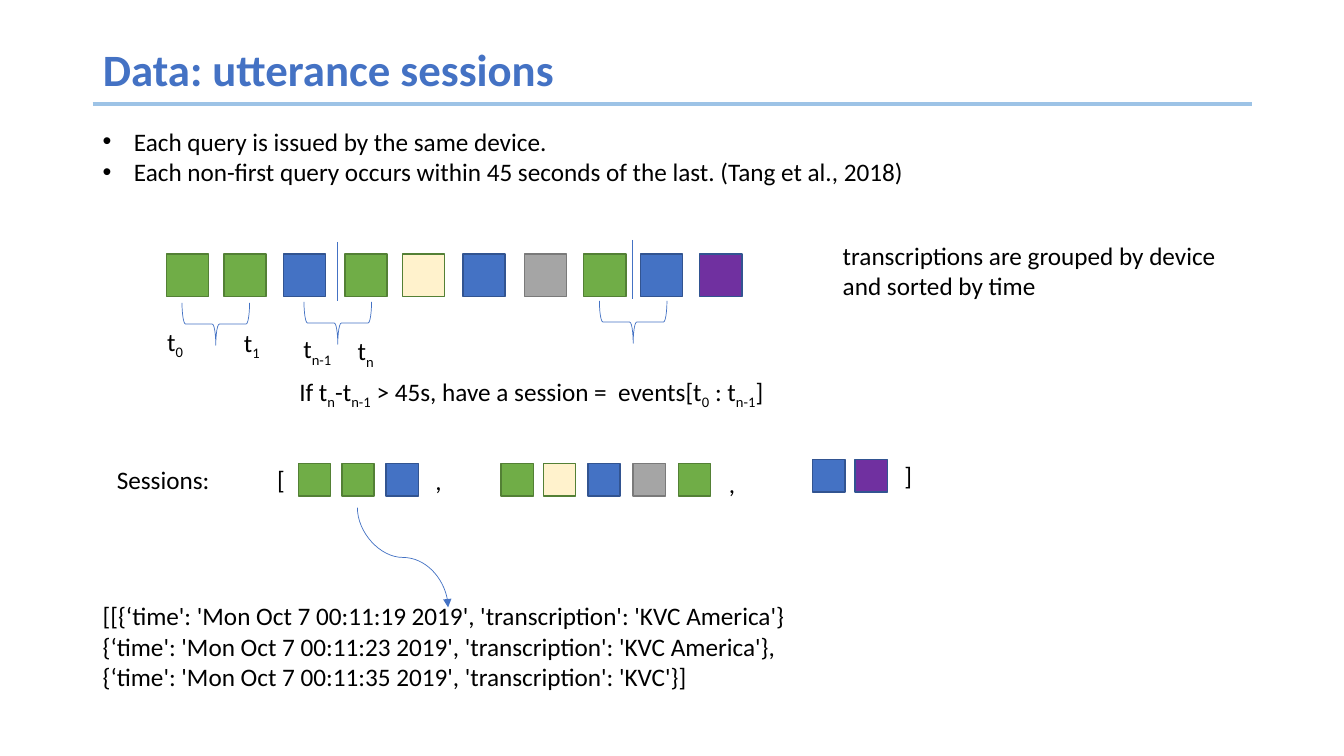
import pptx
import pptx.util
import pptx.dml.color
import pptx.enum.shapes
import pptx.enum.text
import pptx.oxml
import pptx.oxml.ns
from dataclasses import dataclass

Inches = pptx.util.Inches
Pt = pptx.util.Pt
SHAPE = pptx.enum.shapes.MSO_SHAPE
CONNECTOR = pptx.enum.shapes.MSO_CONNECTOR
PP_ALIGN = pptx.enum.text.PP_ALIGN
ANCHOR = pptx.enum.text.MSO_ANCHOR
AUTO_SIZE = pptx.enum.text.MSO_AUTO_SIZE


@dataclass(frozen=True)
class Theme:
    font: str = "Calibri"
    title_size: int = 32
    body_size: int = 18
    text: str = "000000"
    accent: str = "4472C4"
    rule: str = "9DC3E6"
    thin: float = 0.5
    edge: float = 1
    thick: float = 3


THEME = Theme()
DEVICES = {
    "green": ("70AD47", "538035"),
    "blue": ("4472C4", "325491"),
    "cream": ("FFF2CC", "538035"),
    "gray": ("A5A5A5", "7A7A7A"),
    "purple": ("7030A0", "325491"),
}

TITLE = "Data: utterance sessions"
CRITERIA = [
    ["Each query is issued by the same device."],
    ["Each non-first query occurs within 45 seconds of the last. (Tang et al., 2018)"],
]
EVENTS = [
    ("green", 1.65), ("green", 2.22), ("blue", 2.81), ("green", 3.42), ("cream", 3.99),
    ("blue", 4.59), ("gray", 5.2), ("green", 5.79), ("blue", 6.35), ("purple", 6.94),
]
SESSIONS = [
    (4.6, [("green", 2.96), ("green", 3.39), ("blue", 3.83)]),
    (4.6, [("green", 4.97), ("cream", 5.39), ("blue", 5.83), ("gray", 6.28), ("green", 6.73)]),
    (4.56, [("blue", 8.06), ("purple", 8.48)]),
]
DIVIDERS = [(3.35, 2.4), (6.27, 2.38)]
BRACES = [(1.93, 2.88), (3.14, 2.87), (6.07, 2.86)]
NOTES = [
    ((1.56, 3.19, 0.37, 0.4), [["t", "0"]]),
    ((2.32, 3.2, 0.37, 0.4), [["t", "1"]]),
    ((2.91, 3.26, 0.51, 0.4), [["t", "n-1"]]),
    ((3.45, 3.28, 0.37, 0.4), [["t", "n"]]),
    ((2.87, 3.68, 4.99, 0.4), [[
        "If t", "n", "-t", "n-1", " > 45s, have a session =  events[t", "0", " : t", "n-1", "]",
    ]]),
    ((8.26, 2.33, 3.95, 0.71), [["transcriptions are grouped by device"], ["and sorted by time"]]),
    ((1.06, 4.56, 1.19, 0.4), [["Sessions:"]]),
    ((2.65, 4.56, 0.28, 0.4), [["["]]),
    ((4.22, 4.57, 0.27, 0.4), [[","]]),
    ((0.92, 5.91, 7.04, 1.31), [
        ["[[{‘time': 'Mon Oct 7 00:11:19 2019', 'transcription': 'KVC America'}"],
        ["{‘time': 'Mon Oct 7 00:11:23 2019', 'transcription': 'KVC America'},"],
        ["{‘time': 'Mon Oct 7 00:11:35 2019', 'transcription': 'KVC'}]"],
    ]),
]
WRAPPED_NOTES = [
    ((7.13, 4.6, 0.31, 0.4), [[","]]),
    ((8.87, 4.52, 0.31, 0.4), [["]"]]),
]


def rgb(value):
    return pptx.dml.color.RGBColor.from_string(value)


def style_run(r, size, color, bold=False):
    r.font.name = THEME.font
    r.font.size = Pt(size)
    r.font.bold = bold
    r.font.color.rgb = rgb(color)


def style_line(line, color, width):
    line.color.rgb = rgb(color)
    line.width = Pt(width)


def add_title(s):
    sp = s.shapes.title
    sp.left, sp.top, sp.width, sp.height = map(Inches, (0.92, 0.4, 11.5, 0.62))
    tf = sp.text_frame
    tf.auto_size = AUTO_SIZE.NONE
    tf.vertical_anchor = ANCHOR.MIDDLE
    p = tf.paragraphs[0]
    p.alignment = PP_ALIGN.LEFT
    p.line_spacing = 0.9
    r = p.add_run()
    r.text = TITLE
    style_run(r, THEME.title_size, THEME.accent, True)


def add_text(s, box, paragraphs, wrap=False, bullets=False):
    tf = s.shapes.add_textbox(*map(Inches, box)).text_frame
    tf.word_wrap = wrap
    tf.auto_size = AUTO_SIZE.SHAPE_TO_FIT_TEXT
    for i, parts in enumerate(paragraphs):
        p = tf.add_paragraph() if i else tf.paragraphs[0]
        if bullets:
            pPr = p._p.get_or_add_pPr()
            pPr.set("marL", str(Inches(0.31)))
            pPr.set("indent", str(Inches(-0.31)))
            for tag, name, value in (("buFont", "typeface", "Arial"), ("buChar", "char", "•")):
                bullet = pptx.oxml.parse_xml(f"<a:{tag} {pptx.oxml.ns.nsdecls('a')}/>")
                bullet.set(name, value)
                pPr.append(bullet)
        for j, part in enumerate(parts):
            r = p.add_run()
            r.text = part
            style_run(r, THEME.body_size, THEME.text)
            if j % 2:
                r._r.get_or_add_rPr().set("baseline", "-25000")


def add_squares(s, squares, top, side):
    group = s.shapes.add_group_shape()
    for device, left in squares:
        sp = group.shapes.add_shape(SHAPE.RECTANGLE, *map(Inches, (left, top, side, side)))
        fill, edge = DEVICES[device]
        sp.shadow.inherit = False
        sp.fill.solid()
        sp.fill.fore_color.rgb = rgb(fill)
        style_line(sp.line, edge, THEME.edge)


def add_line(s, start, end, color, width, kind=CONNECTOR.STRAIGHT):
    sp = s.shapes.add_connector(kind, *map(Inches, start + end))
    style_line(sp.line, color, width)
    sp._element.spPr.append(pptx.oxml.parse_xml(f"<a:effectLst {pptx.oxml.ns.nsdecls('a')}/>"))
    return sp


def add_brace(s, left, top):
    sp = s.shapes.add_shape(SHAPE.RIGHT_BRACE, *map(Inches, (left, top, 0.42, 0.67)))
    sp.rotation = 90
    sp.shadow.inherit = False
    sp.fill.background()
    style_line(sp.line, THEME.accent, THEME.thin)


def add_session_arrow(s):
    sp = add_line(s, (4.49, 5.08), (3.5, 5.98), THEME.accent, THEME.thin, CONNECTOR.CURVE)
    sp._element.spPr.xfrm.set("rot", str(270 * 60000))
    ln = sp.line._get_or_add_ln()
    ln.append(pptx.oxml.parse_xml(f'<a:tailEnd {pptx.oxml.ns.nsdecls("a")} type="triangle"/>'))


def main():
    prs = pptx.Presentation()
    prs.slide_width, prs.slide_height = Inches(13.33), Inches(7.5)
    s = prs.slides.add_slide(prs.slide_layouts[5])
    add_title(s)
    add_line(s, (0.92, 1.03), (12.42, 1.03), THEME.rule, THEME.thick)
    add_text(s, (0.92, 1.2, 12.37, 1.31), CRITERIA, wrap=True, bullets=True)
    add_squares(s, EVENTS, 2.52, 0.42)
    for top, squares in SESSIONS:
        add_squares(s, squares, top, 0.32)
    for x, top in DIVIDERS:
        add_line(s, (x, top), (x, top + 0.59), THEME.accent, THEME.thin)
    for left, top in BRACES:
        add_brace(s, left, top)
    add_session_arrow(s)
    for box, paragraphs in NOTES:
        add_text(s, box, paragraphs)
    for box, paragraphs in WRAPPED_NOTES:
        add_text(s, box, paragraphs, wrap=True)
    prs.save("out.pptx")


if __name__ == "__main__":
    main()
